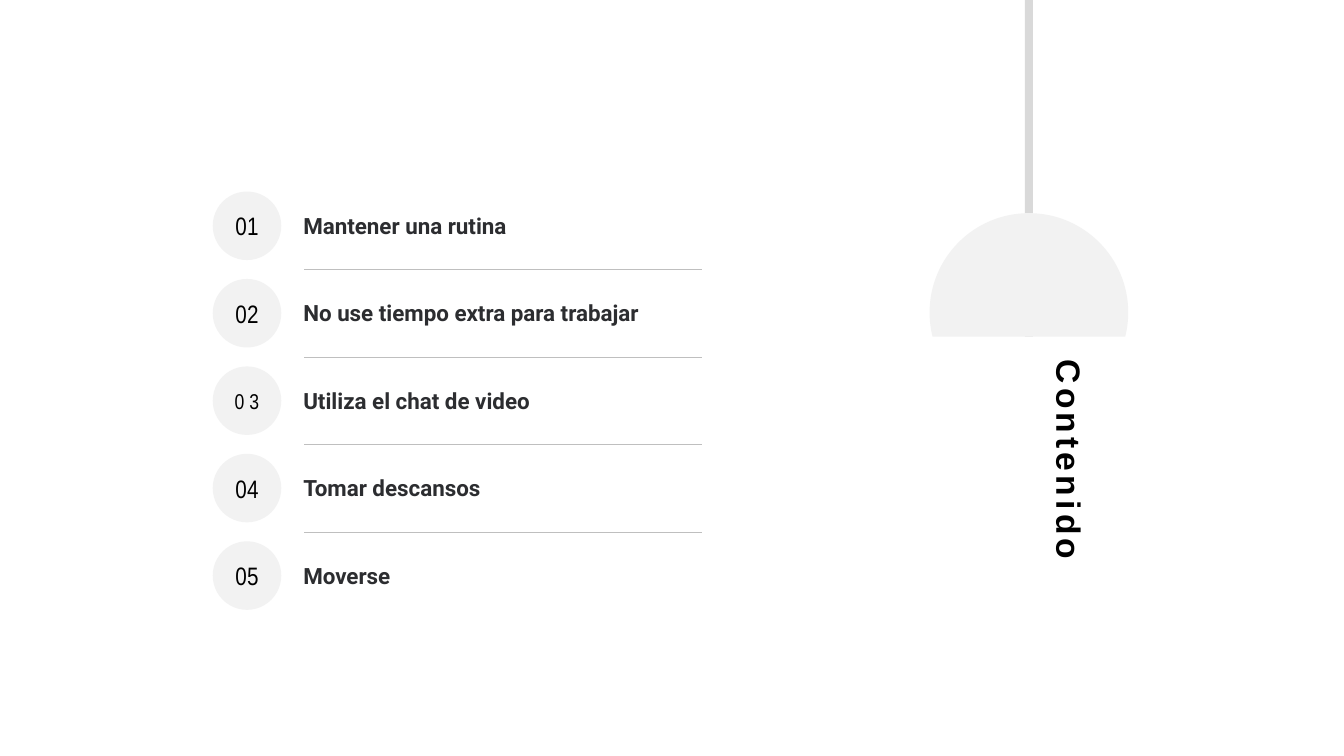
from itertools import pairwise
from math import asin, cos, pi, sin, tan

from lxml import etree
from pptx import Presentation
from pptx.dml.color import RGBColor
from pptx.enum.shapes import MSO_CONNECTOR, MSO_SHAPE
from pptx.enum.text import MSO_ANCHOR, MSO_AUTO_SIZE, PP_ALIGN
from pptx.oxml.ns import qn
from pptx.util import Inches, Pt

STRAIGHT = MSO_CONNECTOR.STRAIGHT
OVAL, RECTANGLE = MSO_SHAPE.OVAL, MSO_SHAPE.RECTANGLE
MIDDLE, CENTER = MSO_ANCHOR.MIDDLE, PP_ALIGN.CENTER
FIT_SHAPE = MSO_AUTO_SIZE.SHAPE_TO_FIT_TEXT

BLACK = RGBColor(0x00, 0x00, 0x00)
INK = RGBColor(0x2C, 0x2D, 0x30)
CORD_GRAY = RGBColor(0xD9, 0xD9, 0xD9)
PALE_GRAY = RGBColor(0xF2, 0xF2, 0xF2)
RULE_GRAY = RGBColor(0xBF, 0xBF, 0xBF)

# Topic, number size and size of the gap between its digits, in points
TOPICS = [
    ("Mantener una rutina", 18, 1),
    ("No use tiempo extra para trabajar", 18, 1),
    ("Utiliza el chat de video", 15.3, 15.3),
    ("Tomar descansos", 18, 1),
    ("Moverse", 18, 1),
]


def paint(shape, color):
    shape.shadow.inherit = False
    shape.fill.solid()
    shape.fill.fore_color.rgb = color
    shape.line.fill.background()


def write(para, text, font_name, size, color, bold=False):
    """Add one formatted run to the paragraph and return it."""
    span = para.add_run()
    span.text = text
    font = span.font
    font.name, font.size, font.bold = font_name, Pt(size), bold
    font.color.rgb = color
    return span


def add_rule(page, left, right, top):
    rule = page.shapes.add_connector(
        STRAIGHT, Inches(left), Inches(top), Inches(right), Inches(top))
    rule.line.color.rgb = RULE_GRAY
    rule.line.width = Pt(0.25)
    etree.SubElement(rule._element.spPr, qn("a:effectLst"))


def add_topic_list(page, left, top, width, height):
    """Numbered discs with topics, and a rule between each two rows."""
    disc = 0.68
    pitch = (height - disc) / (len(TOPICS) - 1)
    for row, (topic, size, gap) in enumerate(TOPICS):
        row_top = top + row * pitch

        # Number disc
        badge = page.shapes.add_shape(
            OVAL, Inches(left), Inches(row_top), Inches(disc), Inches(disc))
        paint(badge, PALE_GRAY)
        frame = badge.text_frame
        frame.margin_left = frame.margin_right = 0
        frame.word_wrap = False
        frame.vertical_anchor = MIDDLE
        para = frame.paragraphs[0]
        para.alignment = CENTER
        for text, points in (("0", size), (" ", gap), (str(row + 1), size)):
            write(para, text, "Arial Narrow", points, BLACK)

        # Topic
        label = page.shapes.add_textbox(
            Inches(left + 0.8), Inches(row_top + 0.1),
            Inches(width - 0.8), Inches(0.49))
        label.text_frame.word_wrap = True
        para = label.text_frame.paragraphs[0]
        para.line_spacing = 1.2
        write(para, topic, "Roboto", 16, INK, True)

        # Rule halfway to the next disc
        if row < len(TOPICS) - 1:
            add_rule(page, left + 0.91, left + 4.85,
                     row_top + (pitch + disc) / 2)


def arc_points(center_x, center_y, radius, start, end):
    """Two control points and the end point of a curve along a circle."""
    pull = 4 / 3 * tan((end - start) / 4)
    shares = [(cos(start) - pull * sin(start), sin(start) + pull * cos(start)),
              (cos(end) + pull * sin(end), sin(end) - pull * cos(end)),
              (cos(end), sin(end))]
    return [(Inches(center_x + radius * x), Inches(center_y + radius * y))
            for x, y in shares]


def add_lamp(page, left, top, width, height):
    """Hanging lamp: a cord from the top and a shade cut off flat below."""
    radius = width / 2
    center_x, bottom = left + radius, top + height
    center_y = bottom - 0.24

    # Cord
    cord = page.shapes.add_shape(
        RECTANGLE, Inches(center_x - 0.04), Inches(top),
        Inches(0.08), Inches(height))
    paint(cord, CORD_GRAY)

    # Shade
    dip = asin((bottom - center_y) / radius)
    stops = [dip, 0, -pi / 2, -pi, -pi - dip]
    builder = page.shapes.build_freeform(
        Inches(center_x + radius * cos(dip)), Inches(bottom))
    for start, end in pairwise(stops):
        builder.add_line_segments(
            arc_points(center_x, center_y, radius, start, end), close=False)
    shade = builder.convert_to_shape()
    paint(shade, PALE_GRAY)

    # Turn each three straight segments into one curve, then close the outline
    segments = list(shade._element.iter(qn("a:lnTo")))
    outline = segments[0].getparent()
    for first in range(0, len(segments), 3):
        curve = etree.SubElement(outline, qn("a:cubicBezTo"))
        for segment in segments[first:first + 3]:
            curve.append(segment[0])
            outline.remove(segment)
    etree.SubElement(outline, qn("a:close"))


def add_vertical_title(page, left, top, width, height):
    title = page.shapes.add_textbox(
        Inches(left), Inches(top), Inches(width), Inches(height))
    frame = title.text_frame
    frame.word_wrap = False
    frame.auto_size = FIT_SHAPE
    frame._txBody.bodyPr.set("vert", "eaVert")
    span = write(frame.paragraphs[0], "Contenido", "Arial", 24, BLACK, True)
    span.font._element.set("spc", "300")


def main():
    deck = Presentation()
    deck.slide_width, deck.slide_height = Inches(13.33), Inches(7.5)
    page = deck.slides.add_slide(deck.slide_layouts[6])
    add_lamp(page, 9.22, 0, 1.97, 3.34)
    add_vertical_title(page, 10.25, 3.47, 0.61, 2.16)
    add_topic_list(page, 2.11, 1.9, 5.89, 4.15)
    deck.save("out.pptx")


if __name__ == "__main__":
    main()
